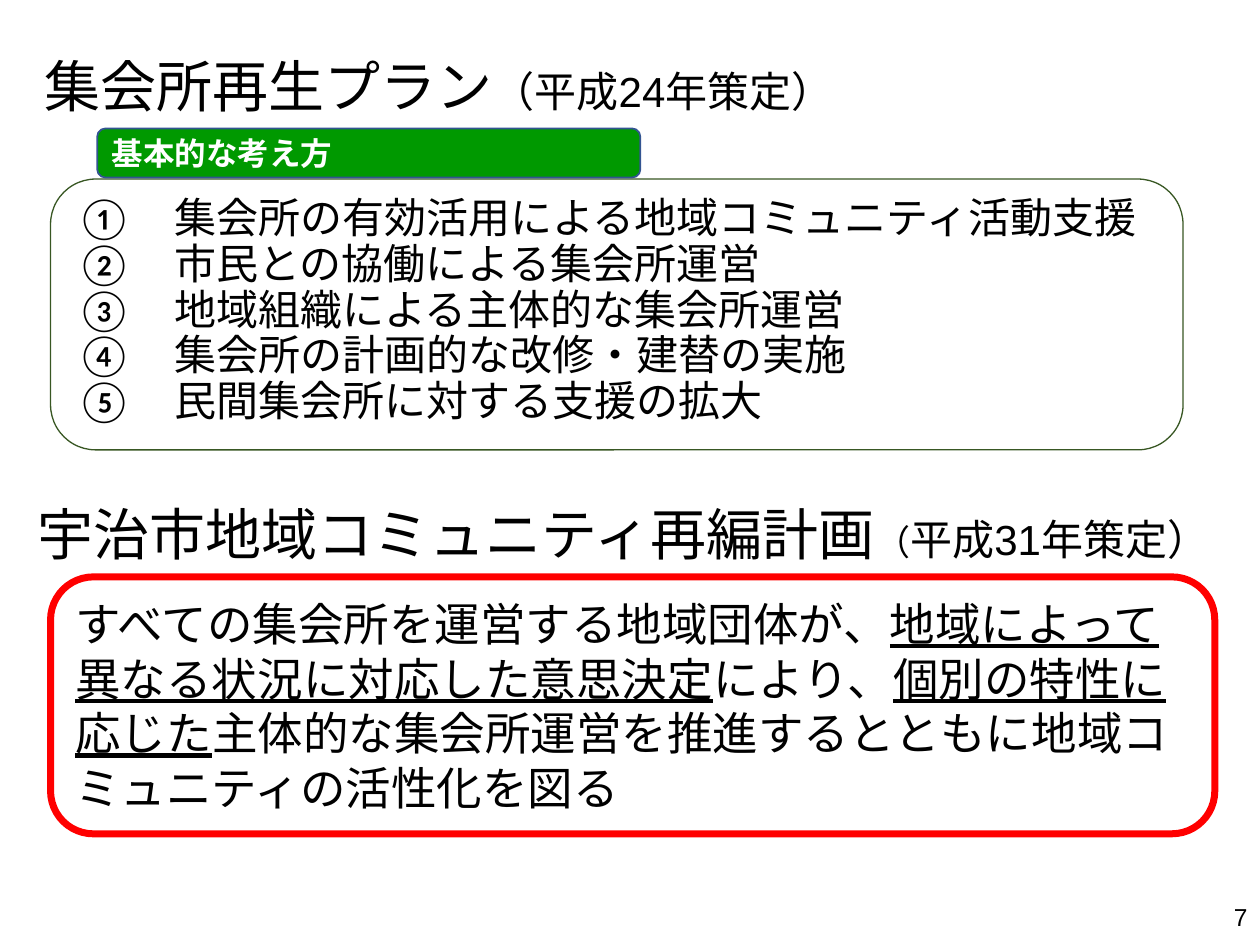
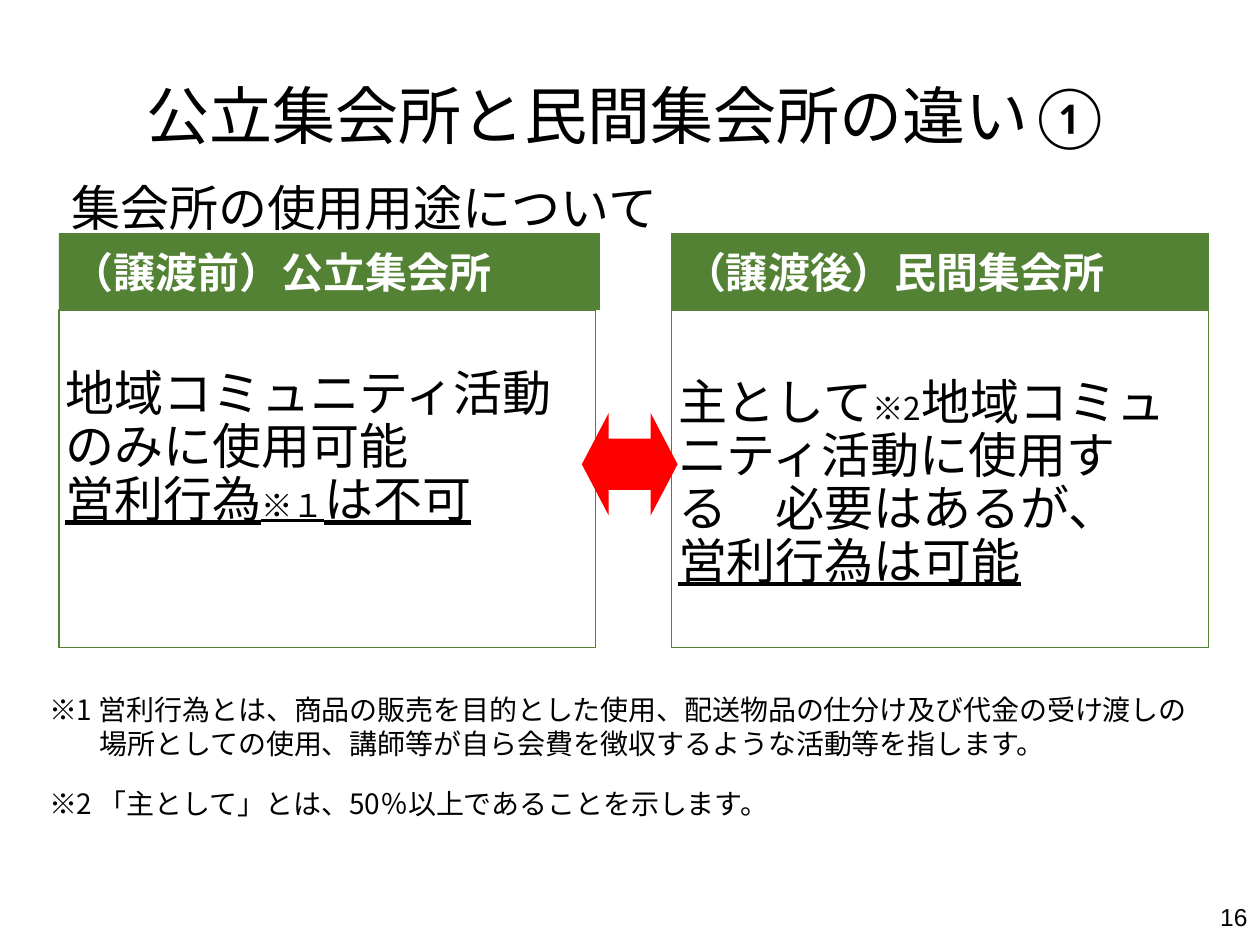
import pptx
import pptx.util
import pptx.dml.color
import pptx.enum.lang
import pptx.enum.shapes
import pptx.enum.text
import pptx.oxml.ns
from dataclasses import dataclass
from lxml import etree

Cm, Pt = pptx.util.Cm, pptx.util.Pt
SHAPE = pptx.enum.shapes.MSO_SHAPE
ALIGN = pptx.enum.text.PP_ALIGN
ANCHOR = pptx.enum.text.MSO_ANCHOR


@dataclass(frozen=True)
class Theme:
    # Colours
    ink: str = "000000"
    white: str = "FFFFFF"
    bright_green: str = "009900"
    green: str = "548235"
    dark_green: str = "385723"
    blue: str = "325491"
    red: str = "FF0000"
    # Fonts
    latin: str = "Arial"
    title_font: str = "Calibri"
    east_asian: str = "Calibri"
    japanese: str = "Noto Sans CJK JP"
    # Type sizes
    title: int = 36
    heading: int = 32
    large: int = 28
    statement: int = 26
    text: int = 24
    bracket: int = 20
    label: int = 18
    note: int = 16
    page: int = 14


def rgb(colour):
    return pptx.dml.color.RGBColor.from_string(colour)


class Deck:
    """Holds the theme and the slide being built."""

    def __init__(self, theme):
        self.theme = theme
        self.prs = pptx.Presentation()
        self.prs.slide_width, self.prs.slide_height = Cm(25.4), Cm(19.05)
        self.slide = None

    def new_slide(self, number):
        self.slide = self.prs.slides.add_slide(self.prs.slide_layouts[1])
        self.text((19.69, 17.96, 5.71, 1.02), [[(str(number), {})]],
                  size=self.theme.page, align=ALIGN.RIGHT, anchor=ANCHOR.MIDDLE)

    def fill_text(self, sp, paras, size, font=None, colour=None, bold=False,
                  align=ALIGN.LEFT, anchor=ANCHOR.TOP, spacing=None, before=0,
                  hang=0, insets=(0.25, 0.13, 0.25, 0.13)):
        """Each paragraph is a list of (text, run options)."""
        tf = sp.text_frame
        tf.word_wrap = True
        tf.auto_size = pptx.enum.text.MSO_AUTO_SIZE.NONE
        tf.vertical_anchor = anchor
        (tf.margin_left, tf.margin_top,
         tf.margin_right, tf.margin_bottom) = map(Cm, insets)
        for i, runs in enumerate(paras):
            p = tf.add_paragraph() if i else tf.paragraphs[0]
            pPr = p._p.get_or_add_pPr()
            pPr.set("marL", str(Cm(hang)))
            pPr.set("indent", str(-Cm(hang)))
            etree.SubElement(pPr, pptx.oxml.ns.qn("a:buNone"))
            p.alignment = align
            p.space_before = Pt(before if i else 0)
            if spacing:
                p.line_spacing = spacing
            for text, options in runs:
                r = p.add_run()
                r.text = text
                r.font.size = Pt(options.get("size", size))
                r.font.name = options.get("font", font or self.theme.latin)
                r.font.bold = bold
                r.font.underline = options.get("underline", False)
                r.font.color.rgb = rgb(colour or self.theme.ink)
                r.font.language_id = pptx.enum.lang.MSO_LANGUAGE_ID.JAPANESE
                ea = etree.SubElement(r._r.get_or_add_rPr(), pptx.oxml.ns.qn("a:ea"))
                ea.set("typeface", self.theme.east_asian)

    def place(self, sp, box):
        sp.left, sp.top, sp.width, sp.height = map(Cm, box)
        return sp

    def outline(self, sp, colour, width):
        sp.line.color.rgb = rgb(colour)
        sp.line.width = Pt(width)

    def title(self, box, paras, **style):
        sp = self.place(self.slide.shapes.title, box)
        self.fill_text(sp, paras, anchor=ANCHOR.MIDDLE, spacing=0.9, **style)

    def body(self, box, paras, line=None, **style):
        sp = self.place(self.slide.placeholders[1], box)
        if line:
            self.outline(sp, *line)
        self.fill_text(sp, paras, **style)

    def text(self, box, paras, **style):
        sp = self.slide.shapes.add_textbox(*map(Cm, box))
        self.fill_text(sp, paras, **style)

    def shape(self, kind, box, fill=None, line=None, paras=None, **style):
        sp = self.slide.shapes.add_shape(kind, *map(Cm, box))
        sp.shadow.inherit = False
        if fill:
            sp.fill.solid()
            sp.fill.fore_color.rgb = rgb(fill)
        else:
            sp.fill.background()
        if line:
            self.outline(sp, *line)
        else:
            sp.line.fill.background()
        if paras:
            self.fill_text(sp, paras, **style)
        return sp

    def band(self, kind, box, label, fill, line, size, font=None):
        self.shape(kind, box, fill, line, [[(label, {})]], size=size, font=font,
                   colour=self.theme.white, bold=True, anchor=ANCHOR.MIDDLE)


def build_plans(deck):
    t = deck.theme
    deck.new_slide(7)
    deck.title((0.64, 0.58, 21.89, 2.46),
               [[("集会所再生プラン", {}), ("（平成24年策定）", {"size": t.text})]],
               size=t.heading)

    # Basic principles
    principles = ["①　集会所の有効活用による地域コミュニティ活動支援",
                  "②　市民との協働による集会所運営",
                  "③　地域組織による主体的な集会所運営",
                  "④　集会所の計画的な改修・建替の実施",
                  "⑤　民間集会所に対する支援の拡大"]
    frame = (1.02, 3.61, 22.83, 5.46)
    deck.shape(SHAPE.ROUNDED_RECTANGLE, frame, line=(t.dark_green, 0.75))
    deck.body(frame, [[(item, {})] for item in principles], size=t.text,
              spacing=Pt(20), before=6, insets=(0.52, 0.57, 0.52, 0.27))
    deck.band(SHAPE.ROUNDED_RECTANGLE, (1.96, 2.59, 10.95, 0.99),
              "基本的な考え方", t.bright_green, (t.blue, 1), t.label)

    # Reorganisation plan
    underlined = {"underline": True}
    deck.shape(SHAPE.ROUNDED_RECTANGLE, (1.02, 11.63, 23.47, 5.18),
               line=(t.red, 4), size=t.statement, anchor=ANCHOR.MIDDLE,
               paras=[[("すべての集会所を運営する地域団体が、", {}),
                       ("地域によって異なる状況に対応した意思決定", underlined),
                       ("により、", {}),
                       ("個別の特性に応じた", underlined),
                       ("主体的な集会所運営を推進するとともに"
                        "地域コミュニティの活性化を図る", {})]])
    deck.text((0.51, 9.6, 24.74, 2.46),
              [[("宇治市地域コミュニティ再編計画", {}),
                ("（", {"size": t.bracket}),
                ("平成31年策定）", {"size": t.text})]],
              size=t.heading, anchor=ANCHOR.MIDDLE, spacing=0.9)


def build_comparison(deck):
    t = deck.theme
    deck.new_slide(16)
    deck.title((1.75, 1.17, 21.89, 2.46), [[("公立集会所と民間集会所の違い①", {})]],
               size=t.title, font=t.title_font, align=ALIGN.CENTER)

    # Before and after the transfer
    before_x, after_x = 1.19, 13.54
    box_top, box_w, box_h = 6.25, 10.82, 6.81
    underlined = {"underline": True}
    border = (t.green, 0.75)
    deck.body((before_x, box_top, box_w, box_h),
              [[("地域コミュニティ活動のみに使用可能", {})],
               [("営利行為", underlined),
                ("※１", {"underline": True, "size": t.label}),
                ("は不可", underlined)]],
              line=border, size=t.large, spacing=0.9,
              insets=(0.13, 1.19, 0.25, 0.13))
    deck.shape(SHAPE.RECTANGLE, (after_x, box_top, box_w, box_h), line=border,
               paras=[[("主として", {}),
                       ("※2", {"size": t.label, "font": t.japanese}),
                       ("地域コミュニティ活動に使用する　必要はあるが、", {})],
                      [("営利行為は可能", underlined)]],
               size=t.large, spacing=0.9, insets=(0.13, 1.37, 0.25, 0.13))
    for x, width, label, font in (
            (before_x, 10.9, "（譲渡前）公立集会所", t.latin),
            (after_x, box_w, "（譲渡後）民間集会所", t.japanese)):
        deck.band(SHAPE.RECTANGLE, (x, 4.7, width, 1.55), label,
                  t.green, (t.green, 0.5), t.text, font)
    arrow = deck.shape(SHAPE.LEFT_RIGHT_ARROW, (11.73, 8.33, 1.93, 2.06), t.red)
    arrow.adjustments[0], arrow.adjustments[1] = 0.5, 0.28

    # Subheading and notes
    deck.text((1.19, 3.45, 15.11, 1.45), [[("集会所の使用用途について", {})]],
              size=t.large, font=t.japanese)
    for top, height, note in (
            (13.84, 1.63, "※1 営利行為とは、商品の販売を目的とした使用、配送物品の仕分け"
                          "及び代金の受け渡しの場所としての使用、講師等が自ら会費を"
                          "徴収するような活動等を指します。"),
            (15.72, 0.94, "※2 「主として」とは、50％以上であることを示します。")):
        deck.text((0.74, top, 23.6, height), [[(note, {})]],
                  size=t.note, font=t.japanese, hang=1.02)


def main():
    deck = Deck(Theme())
    build_plans(deck)
    build_comparison(deck)
    deck.prs.save("out.pptx")


if __name__ == "__main__":
    main()
